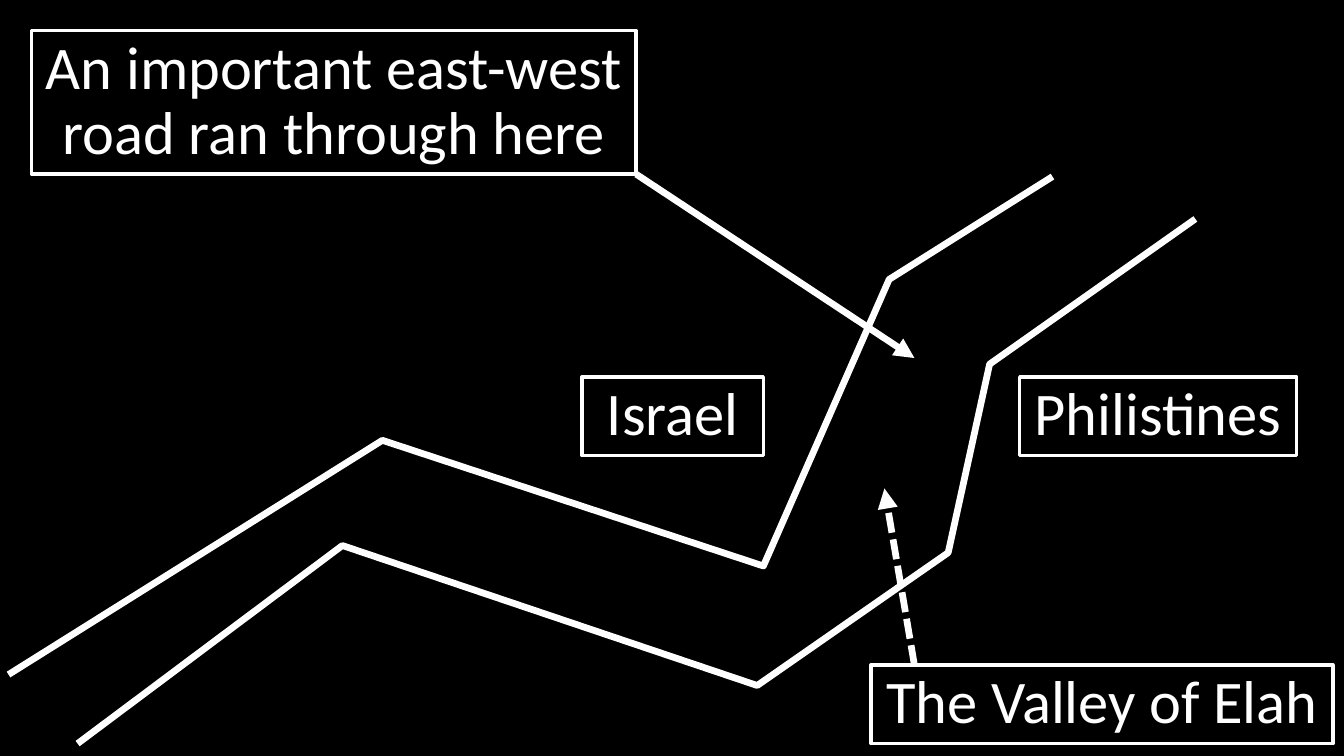
from lxml.etree import SubElement
from pptx import Presentation
from pptx.dml.color import RGBColor
from pptx.enum.dml import MSO_LINE_DASH_STYLE as Dash
from pptx.enum.shapes import MSO_CONNECTOR as Connector, MSO_SHAPE as Shape
from pptx.enum.text import MSO_ANCHOR as Anchor, MSO_AUTO_SIZE as AutoSize, PP_ALIGN as Align
from pptx.oxml.ns import qn
from pptx.util import Cm, Pt

BLACK = RGBColor(0, 0, 0)
WHITE = RGBColor(255, 255, 255)


def write_text(shape, text, *, font="Calibri", size=36, color=WHITE, align=Align.CENTER, spacing=0.9):
    frame = shape.text_frame
    frame.word_wrap = True
    frame.auto_size = AutoSize.SHAPE_TO_FIT_TEXT
    frame.vertical_anchor = Anchor.MIDDLE
    paragraph = frame.paragraphs[0]
    paragraph.alignment = align
    paragraph.line_spacing = spacing
    run = paragraph.add_run()
    run.text = text
    run.font.name = font
    run.font.size = Pt(size)
    run.font.color.rgb = color


class MapSlide:
    label_line = 2
    route_line = 4

    def __init__(self, slide):
        self.shapes = slide.shapes
        slide.background.fill.solid()
        slide.background.fill.fore_color.rgb = BLACK

    def stroke(self, shape, width):
        shape.line.color.rgb = WHITE
        shape.line.width = Pt(width)

    def label(self, text, left, top, width, height=1.65, opacity=60):
        box = self.shapes.add_shape(Shape.RECTANGLE, Cm(left), Cm(top), Cm(width), Cm(height))
        box.shadow.inherit = False
        box.fill.solid()
        box.fill.fore_color.rgb = BLACK
        tint = box.fill._xPr.find(qn("a:solidFill"))[0]
        SubElement(tint, qn("a:alpha"), val=str(opacity * 1000))
        self.stroke(box, self.label_line)
        write_text(box, text)

    def ridge(self, points):
        start, *rest = [(Cm(x), Cm(y)) for x, y in points]
        builder = self.shapes.build_freeform(*start)
        builder.add_line_segments(rest, close=False)
        outline = builder.convert_to_shape()
        outline.shadow.inherit = False
        outline.fill.background()
        self.stroke(outline, self.route_line)

    def arrow(self, start, end, dash=None):
        ends = [Cm(value) for value in (*start, *end)]
        pointer = self.shapes.add_connector(Connector.STRAIGHT, *ends)
        self.stroke(pointer, self.route_line)
        if dash:
            pointer.line.dash_style = dash
        SubElement(pointer.line._get_or_add_ln(), qn("a:tailEnd"), type="triangle")
        SubElement(pointer._element.spPr, qn("a:effectLst"))


def main():
    deck = Presentation()
    deck.slide_width, deck.slide_height = Cm(28.22), Cm(15.88)
    valley = MapSlide(deck.slides.add_slide(deck.slide_layouts[6]))

    camps_top = 7.92
    valley.label("Philistines", 21.41, camps_top, 5.82)
    valley.label("Israel", 12.22, camps_top, 3.81)

    valley.ridge([(22.1, 3.71), (18.67, 5.87), (16.03, 11.89), (8.03, 9.25), (0.18, 14.17)])
    valley.ridge([(1.63, 15.62), (7.19, 11.46), (15.9, 14.4), (19.91, 11.61), (20.78, 7.65), (25.1, 4.6)])

    valley.label("An important east-west road ran through here", 0.66, 0.64, 12.7, 3.02)
    valley.arrow((13.36, 3.66), (19.2, 7.52))

    valley.label("The Valley of Elah", 18.29, 13.97, 9.7, opacity=80)
    valley.arrow((19.2, 13.97), (18.57, 10.26), dash=Dash.SQUARE_DOT)

    deck.save("out.pptx")


if __name__ == "__main__":
    main()
